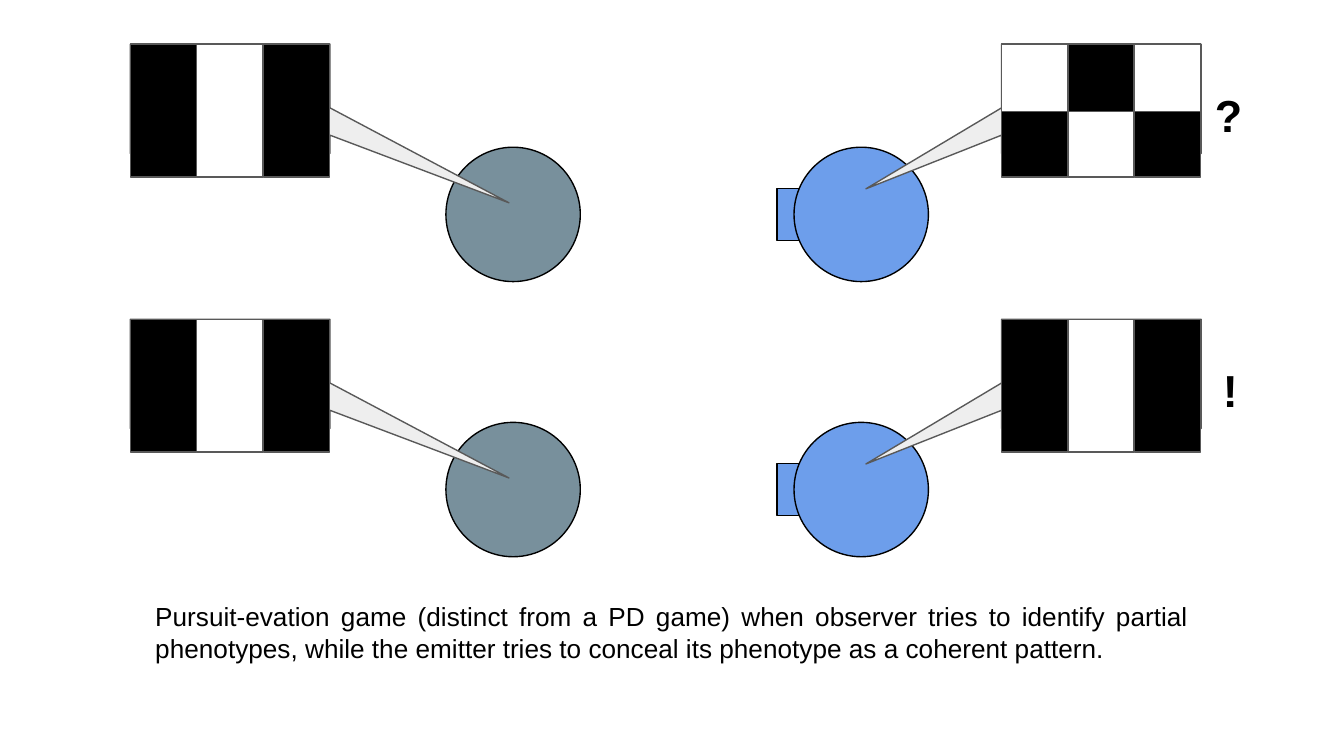
import pptx
import pptx.util
from pptx.dml.color import RGBColor
from pptx.enum.shapes import MSO_SHAPE
from pptx.enum.text import MSO_ANCHOR, PP_ALIGN

Pt = pptx.util.Pt

BLACK = RGBColor(0x00, 0x00, 0x00)
WHITE = RGBColor(0xFF, 0xFF, 0xFF)
OUTLINE = RGBColor(0x59, 0x59, 0x59)
BEAM = RGBColor(0xEE, 0xEE, 0xEE)
EMITTER = RGBColor(0x78, 0x90, 0x9C)
OBSERVER = RGBColor(0x6D, 0x9E, 0xEB)

# Content: a pattern lists its tiles as (column, top, height, colour)
CAPTION = ("Pursuit-evation game (distinct from a PD game) when observer tries "
           "to identify partial phenotypes, while the emitter tries to conceal "
           "its phenotype as a coherent pattern.")
FULL, HALF = 71.1, 36
STRIPES = [(0, 0, FULL, BLACK), (1, 0, FULL, WHITE), (2, 0, FULL, BLACK)]
CHECKS = [(0, FULL - HALF, HALF, BLACK), (1, 0, FULL, WHITE), (2, 0, FULL, BLACK),
          (0, 0, HALF, WHITE), (1, 0, HALF, BLACK), (2, 0, HALF, WHITE)]
# Each round: emitted pattern, perceived pattern, verdict, verdict width
ROUNDS = [(STRIPES, CHECKS, "?", 25.2), (STRIPES, STRIPES, "!", 31)]

# Layout
FIRST_TOP, ROUND_PITCH = 23.7, 147.4
TILE_WIDTH, TILE_PITCH = 35.5, 35.65
EMITTED_LEFT, PERCEIVED_LEFT = 69.8, 536.5
CALLOUT_WIDTH, CALLOUT_HEIGHT = 107, 58.5
HEAD_SIZE, HEAD_DROP = 72, 55.2
VERDICT_LEFT = 643.7


def add_part(shapes, kind, left, top, width, height, fill, line=BLACK):
    part = shapes.add_shape(kind, Pt(left), Pt(top), Pt(width), Pt(height))
    part.shadow.inherit = False
    part.fill.solid()
    part.fill.fore_color.rgb = fill
    part.line.color.rgb = line
    part.line.width = Pt(0.75)
    return part


def add_text(shapes, text, *, left, top, width, height, size, align, bold=False):
    box = shapes.add_textbox(Pt(left), Pt(top), Pt(width), Pt(height))
    frame = box.text_frame
    frame.word_wrap = True
    frame.vertical_anchor = MSO_ANCHOR.TOP
    frame.margin_left = frame.margin_right = Pt(7.2)
    frame.margin_top = frame.margin_bottom = Pt(7.2)
    paragraph = frame.paragraphs[0]
    paragraph.alignment = align
    run = paragraph.add_run()
    run.text = text
    run.font.name = "Arial"
    run.font.size = Pt(size)
    run.font.bold = bold
    run.font.color.rgb = BLACK


def add_callout(shapes, left, top, tip):
    callout = add_part(shapes, MSO_SHAPE.RECTANGULAR_CALLOUT, left, top,
                       CALLOUT_WIDTH, CALLOUT_HEIGHT, BEAM, OUTLINE)
    callout.adjustments[0], callout.adjustments[1] = tip


def add_pattern(shapes, left, top, tiles):
    for column, drop, height, colour in tiles:
        add_part(shapes, MSO_SHAPE.RECTANGLE, left + column * TILE_PITCH,
                 top + drop, TILE_WIDTH, height, colour, OUTLINE)


def add_head(shapes, left, top, colour):
    add_part(shapes, MSO_SHAPE.FLOWCHART_CONNECTOR, left, top + HEAD_DROP,
             HEAD_SIZE, HEAD_SIZE, colour)


def main():
    deck = pptx.Presentation()
    deck.slide_width, deck.slide_height = Pt(720), Pt(405)
    slide = deck.slides.add_slide(deck.slide_layouts[6])
    shapes = slide.shapes

    add_text(shapes, CAPTION, left=76.1, top=314.6, width=568, height=58.3,
             size=14, align=PP_ALIGN.JUSTIFY)

    for index, (emitted, perceived, verdict, verdict_width) in enumerate(ROUNDS):
        top = FIRST_TOP + index * ROUND_PITCH

        # Emitter and observer
        add_head(shapes, 238.9, top, EMITTER)
        observer = shapes.add_group_shape().shapes
        add_part(observer, MSO_SHAPE.RECTANGLE, 416.2, top + 77.2, 71.3, 28, OBSERVER)
        add_head(observer, 425.4, top, OBSERVER)

        # Patterns with the callouts that link them to the heads
        add_callout(shapes, EMITTED_LEFT, top, (1.396, 0.953))
        add_callout(shapes, PERCEIVED_LEFT, top, (-1.179, 0.825))
        add_pattern(shapes, EMITTED_LEFT, top, emitted)
        add_pattern(shapes, PERCEIVED_LEFT, top, perceived)

        # Verdict
        add_text(shapes, verdict, left=VERDICT_LEFT, top=top + 15.9,
                 width=verdict_width, height=39.6, size=24,
                 align=PP_ALIGN.CENTER, bold=True)

    deck.save("out.pptx")


if __name__ == "__main__":
    main()
